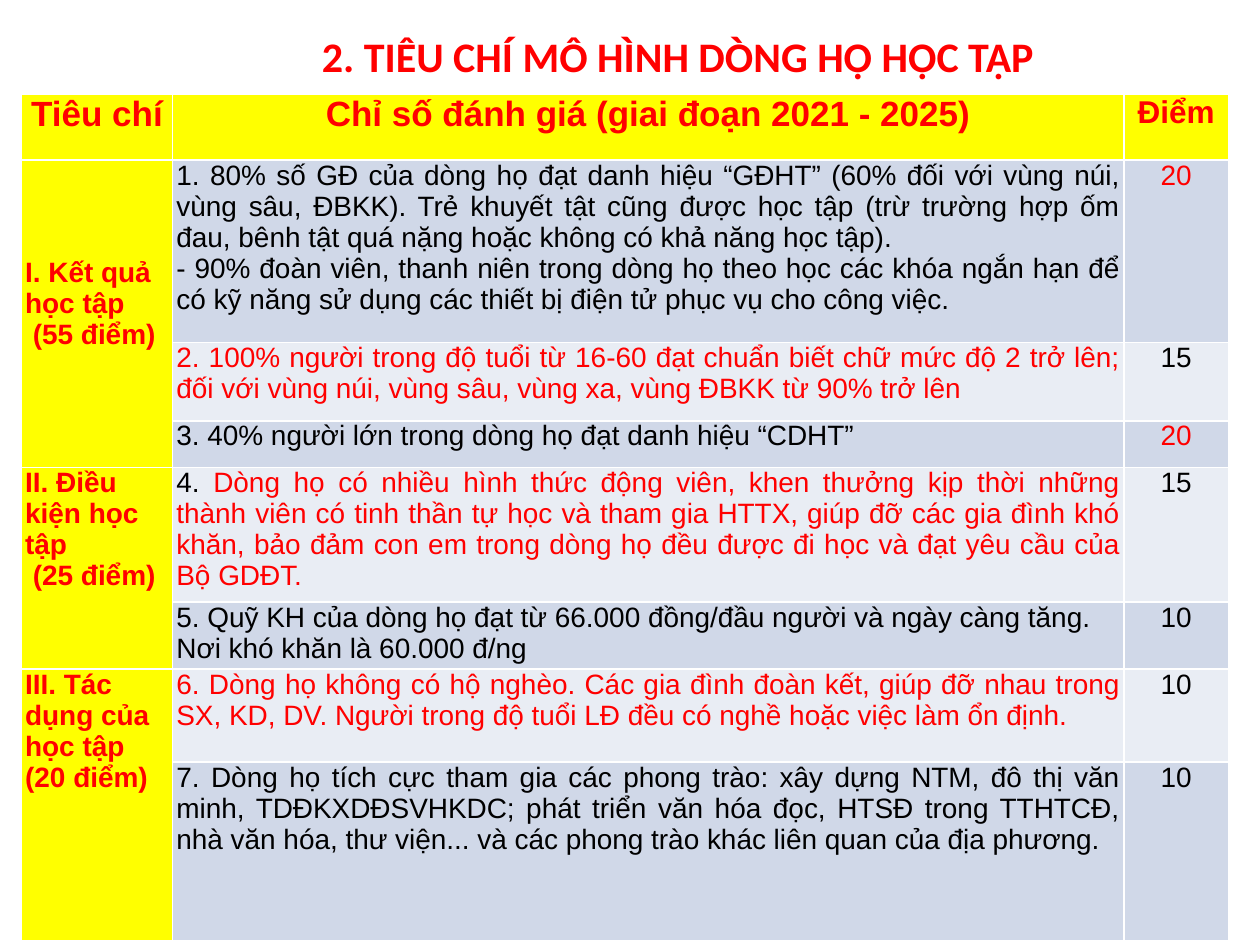
from pptx import Presentation
from pptx.dml.color import RGBColor
from pptx.enum.text import MSO_AUTO_SIZE, PP_ALIGN as Align
from pptx.util import Inches, Pt

RED, BLACK, YELLOW = "FF0000", "000000", "FFFF00"
BANDS = ("E9EDF4", "D0D8E8")
COLUMN_WIDTHS = (1.2, 7.55, 0.83)
ROW_HEIGHTS = (0.52, 1.45, 0.62, 0.37, 1.07, 0.53, 0.74, 1.42)
HEADINGS = (("Tiêu chí", 20), ("Chỉ số đánh giá (giai đoạn 2021 - 2025)", 20), ("Điểm", 18))

CRITERIA = (
    (1, 3, 0.77, ("I. Kết quả học tập", " (55 điểm)")),
    (4, 5, 0, ("II. Điều kiện học tập", " (25 điểm)")),
    (6, 7, 0, ("III. Tác dụng của học tập (20 điểm)",)),
)

INDICATORS = (
    ([[("1. 80% số GĐ của dòng họ đạt danh hiệu “GĐHT” (60% đối với vùng núi, vùng sâu, ĐBKK). "
        "Trẻ khuyết tật cũng được học tập (trừ trường hợp ốm đau, bênh tật quá nặng hoặc "
        "không có khả năng học tập).", BLACK)],
      [("- 90% đoàn viên, thanh niên trong dòng họ theo học các khóa ngắn hạn để có kỹ năng "
        "sử dụng các thiết bị điện tử phục vụ cho công việc.", BLACK)]],
     Align.JUSTIFY, "20", RED),
    ([[("2. 100% người trong độ tuổi từ 16-60 đạt chuẩn biết chữ mức độ 2 trở lên; "
        "đối với vùng núi, vùng sâu, vùng xa, vùng ĐBKK từ 90% trở lên", RED)]],
     Align.JUSTIFY, "15", BLACK),
    ([[("3. 40% người lớn trong dòng họ đạt danh hiệu “CDHT”", BLACK)]],
     Align.JUSTIFY, "20", RED),
    ([[("4. ", BLACK),
       ("Dòng họ có nhiều hình thức động viên, khen thưởng kịp thời những thành viên có "
        "tinh thần tự học và tham gia HTTX, giúp đỡ các gia đình khó khăn, bảo đảm con em "
        "trong dòng họ đều được đi học và đạt yêu cầu của Bộ GDĐT.", RED)]],
     Align.JUSTIFY, "15", BLACK),
    ([[("5. Quỹ KH của dòng họ đạt từ 66.000 đồng/đầu người và ngày càng tăng. "
        "Nơi khó khăn là 60.000 đ/ng", BLACK)]],
     Align.LEFT, "10", BLACK),
    ([[("6. Dòng họ không có hộ nghèo. Các gia đình đoàn kết, giúp đỡ nhau trong SX, KD, DV. "
        "Người trong độ tuổi LĐ đều có nghề hoặc việc làm ổn định.", RED)]],
     Align.JUSTIFY, "10", BLACK),
    ([[("7. Dòng họ tích cực tham gia các phong trào: xây dựng NTM, đô thị văn minh, "
        "TDĐKXDĐSVHKDC; phát triển văn hóa đọc, HTSĐ trong TTHTCĐ, nhà văn hóa, thư viện... "
        "và các phong trào khác liên quan của địa phương.", BLACK)]],
     Align.JUSTIFY, "10", BLACK),
)


def color(hex_value):
    return RGBColor.from_string(hex_value)


def write(frame, paragraphs, align, size, bold=False, font="Arial"):
    for index, runs in enumerate(paragraphs):
        paragraph = frame.add_paragraph() if index else frame.paragraphs[0]
        paragraph.alignment = align
        for text, ink in runs:
            run = paragraph.add_run()
            run.text = text
            run.font.name = font
            run.font.size = Pt(size)
            run.font.bold = bold
            run.font.color.rgb = color(ink)


def fill_cell(cell, background, paragraphs, align, size=16, bold=False, top=0):
    cell.fill.solid()
    cell.fill.fore_color.rgb = color(background)
    cell.margin_left = cell.margin_right = Inches(0.03)
    cell.margin_top, cell.margin_bottom = Inches(top), 0
    write(cell.text_frame, paragraphs, align, size, bold)


def add_title(slide):
    title = slide.shapes.add_textbox(Inches(2.17), Inches(0.19), Inches(6.42), Inches(0.5))
    frame = title.text_frame
    frame.word_wrap = True
    frame.auto_size = MSO_AUTO_SIZE.SHAPE_TO_FIT_TEXT
    write(frame, [[("2. TIÊU CHÍ MÔ HÌNH DÒNG HỌ HỌC TẬP", RED)]],
          Align.CENTER, 24, True, "Calibri")


def add_criteria_table(slide):
    table = slide.shapes.add_table(
        len(ROW_HEIGHTS), len(COLUMN_WIDTHS), Inches(0.17), Inches(0.75),
        Inches(sum(COLUMN_WIDTHS)), Inches(sum(ROW_HEIGHTS))).table
    for column, width in zip(table.columns, COLUMN_WIDTHS):
        column.width = Inches(width)
    for row, height in zip(table.rows, ROW_HEIGHTS):
        row.height = Inches(height)

    for column, (heading, size) in enumerate(HEADINGS):
        fill_cell(table.cell(0, column), YELLOW, [[(heading, RED)]], Align.CENTER, size, True)
    for first, last, top, lines in CRITERIA:
        criterion = table.cell(first, 0)
        criterion.merge(table.cell(last, 0))
        fill_cell(criterion, YELLOW, [[(line, RED)] for line in lines], Align.LEFT,
                  bold=True, top=top)
    for row, (indicator, align, points, ink) in enumerate(INDICATORS, 1):
        band = BANDS[row % 2]
        fill_cell(table.cell(row, 1), band, indicator, align)
        fill_cell(table.cell(row, 2), band, [[(points, ink)]], Align.CENTER)


def main():
    deck = Presentation()
    deck.slide_width, deck.slide_height = Inches(10), Inches(7.5)
    slide = deck.slides.add_slide(deck.slide_layouts[6])
    add_criteria_table(slide)
    add_title(slide)
    deck.save("out.pptx")


if __name__ == "__main__":
    main()
